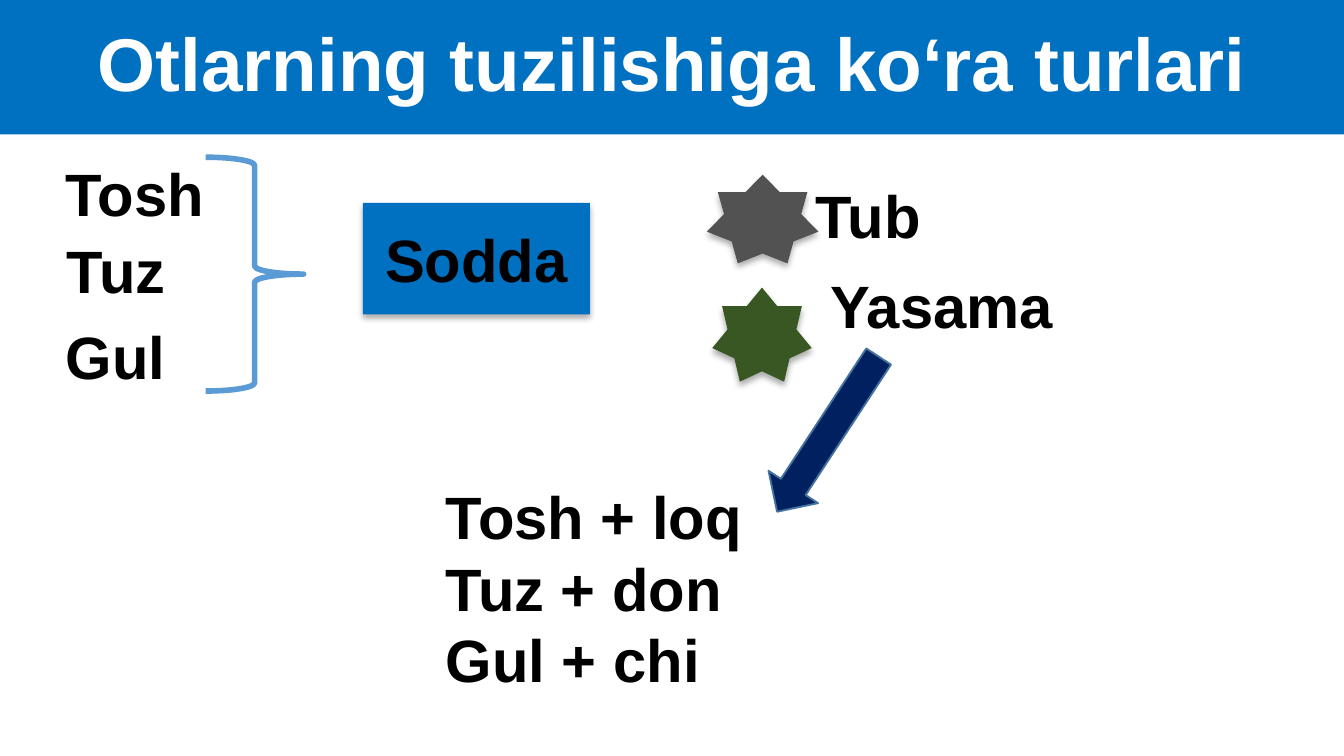
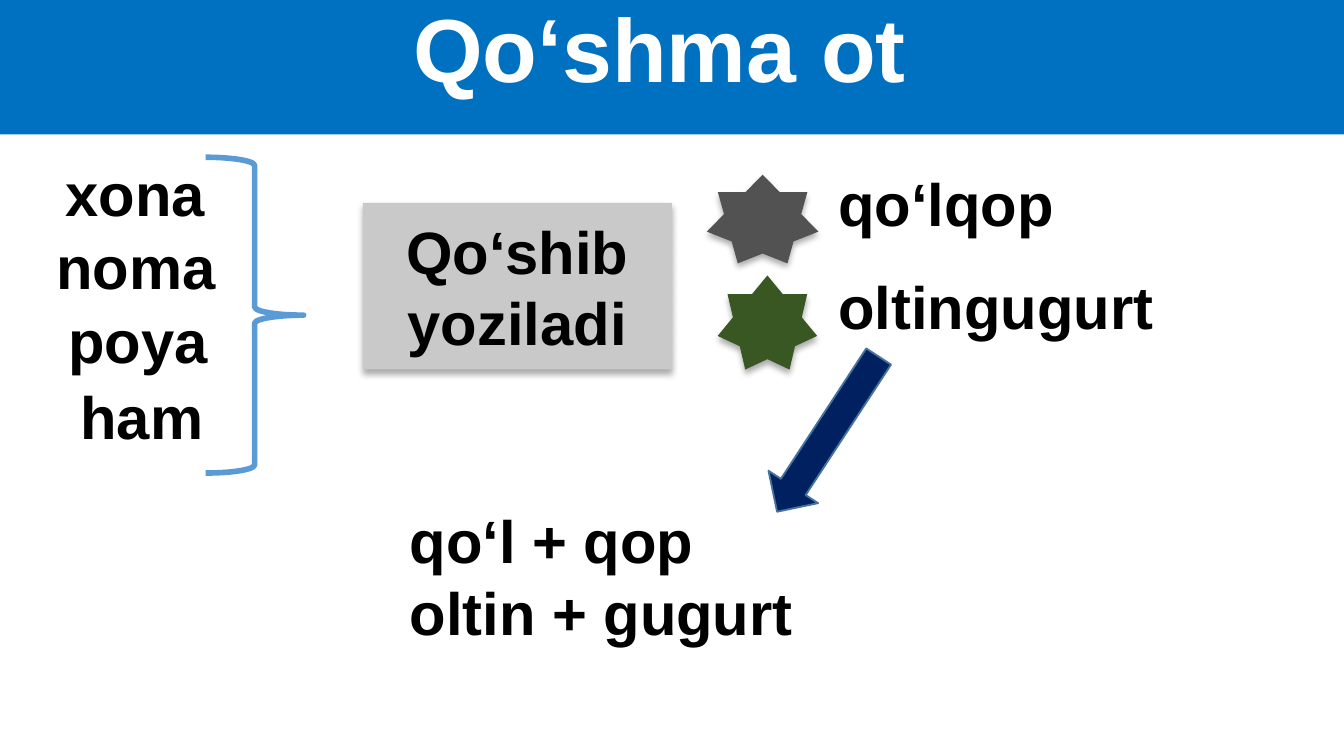
from lxml import etree
from pptx import Presentation
from pptx.dml.color import RGBColor
from pptx.enum.shapes import MSO_SHAPE as SHAPE
from pptx.enum.text import MSO_ANCHOR as ANCHOR, MSO_AUTO_SIZE as AUTO, PP_ALIGN as ALIGN
from pptx.oxml.ns import qn
from pptx.util import Inches, Pt

COLORS = {
    "band": "0070C0", "white": "FFFFFF", "black": "000000", "gray": "525252",
    "green": "385723", "silver": "C9C9C9", "brace": "5B9BD5",
    "arrow": "002060", "arrow_line": "43739E",
}
FONT = "Arial"
BODY_SIZE = 32
LINE_H = 0.64
SLIDE_W = 10

# Boxes are (left, top, width, height); words are (text, left, top, width).
SLIDES = [
    {
        "title": ("Otlarning tuzilishiga ko‘ra turlari", 40, 0, 0),
        "brace_height": 1.74,
        "label": ("Sodda", "band", (2.7, 1.51, 1.69, 0.83)),
        "green_star": (5.3, 2.14),
        "words": [
            ("Tosh", 0.39, 1.12, 1.4),
            ("Tuz", 0.4, 1.69, 1.61),
            ("Gul", 0.39, 2.33, 2.02),
            ("Tub", 5.97, 1.28, 1.74),
            ("Yasama", 6.08, 1.95, 2.08),
        ],
        "parts": (["Tosh + loq", "Tuz + don", "Gul + chi"], 3.22, 3.52),
    },
    {
        "title": ("Qo‘shma ot", 48, 0.18, 0.2),
        "brace_height": 2.35,
        "label": ("Qo‘shib yoziladi", "silver", (2.7, 1.51, 2.3, 1.24)),
        "green_star": (5.34, 2.05),
        "words": [
            ("xona", 0.39, 1.12, 1.4),
            ("noma", 0.32, 1.66, 1.61),
            ("poya", 0.41, 2.21, 1.4),
            ("ham", 0.5, 2.78, 1.37),
            ("qo‘lqop", 6.14, 1.19, 2.08),
            ("oltingugurt", 6.14, 1.96, 2.74),
        ],
        "parts": (["qo‘l + qop", "oltin + gugurt"], 2.95, 3.7),
    },
]


def rgb(name):
    return RGBColor.from_string(COLORS[name])


def write(tf, lines, size=BODY_SIZE, color="black", align=ALIGN.LEFT):
    tf.word_wrap = True
    for i, line in enumerate(lines):
        p = tf.add_paragraph() if i else tf.paragraphs[0]
        p.alignment = align
        r = p.add_run()
        r.text = line
        r.font.name, r.font.size, r.font.bold = FONT, Pt(size), True
        r.font.color.rgb = rgb(color)


def add_text(s, lines, left, top, width, height=LINE_H):
    tf = s.shapes.add_textbox(*map(Inches, (left, top, width, height))).text_frame
    write(tf, lines)
    tf.auto_size = AUTO.SHAPE_TO_FIT_TEXT


def add_shape(s, kind, box, fill=None, line=None, line_width=1, shadow=False):
    sp = s.shapes.add_shape(kind, *map(Inches, box))
    if fill:
        sp.fill.solid()
        sp.fill.fore_color.rgb = rgb(fill)
    else:
        sp.fill.background()
    if line:
        sp.line.color.rgb = rgb(line)
        sp.line.width = Pt(line_width)
    else:
        sp.line.fill.background()
    sp.shadow.inherit = False
    if shadow:
        add_shadow(sp)
    return sp


def add_shadow(sp):
    effects = sp._element.spPr.find(qn("a:effectLst"))
    outer = etree.SubElement(effects, qn("a:outerShdw"), blurRad=str(Pt(3.5)),
                             dist=str(Pt(2.2)), dir="5400000", algn="ctr", rotWithShape="0")
    color = etree.SubElement(outer, qn("a:srgbClr"), val=COLORS["black"])
    etree.SubElement(color, qn("a:alpha"), val="32000")


def add_title(s, text, size, extra_right, extra_bottom):
    """Draw the title band; the extra insets move the text left and up."""
    tf = add_shape(s, SHAPE.RECTANGLE, (0, 0, SLIDE_W, 1), "band").text_frame
    tf.vertical_anchor = ANCHOR.MIDDLE
    tf.margin_right = Inches(0.1 + extra_right)
    tf.margin_bottom = Inches(0.05 + extra_bottom)
    write(tf, [text], size, "white", ALIGN.CENTER)
    tf.paragraphs[0].line_spacing = 0.9


def build_slide(prs, content):
    s = prs.slides.add_slide(prs.slide_layouts[6])
    add_title(s, *content["title"])
    add_shape(s, SHAPE.STAR_7_POINT, (5.26, 1.3, 0.83, 0.66), "gray", shadow=True)
    add_shape(s, SHAPE.RIGHT_BRACE, (1.53, 1.17, 0.73, content["brace_height"]),
              line="brace", line_width=3)

    text, fill, box = content["label"]
    tf = add_shape(s, SHAPE.RECTANGLE, box, fill, shadow=True).text_frame
    tf.vertical_anchor = ANCHOR.MIDDLE
    write(tf, [text], align=ALIGN.CENTER)

    add_shape(s, SHAPE.STAR_7_POINT, (*content["green_star"], 0.74, 0.7), "green", shadow=True)
    for word, left, top, width in content["words"]:
        add_text(s, [word], left, top, width)
    arrow = add_shape(s, SHAPE.DOWN_ARROW, (5.94, 2.54, 0.44, 1.38), "arrow", "arrow_line")
    arrow.rotation = 33.2
    lines, left, top = content["parts"]
    add_text(s, lines, left, top, 3.2, 1.72)


def main():
    prs = Presentation()
    prs.slide_width, prs.slide_height = Inches(SLIDE_W), Inches(SLIDE_W * 9 / 16)
    for content in SLIDES:
        build_slide(prs, content)
    prs.save("out.pptx")


if __name__ == "__main__":
    main()
